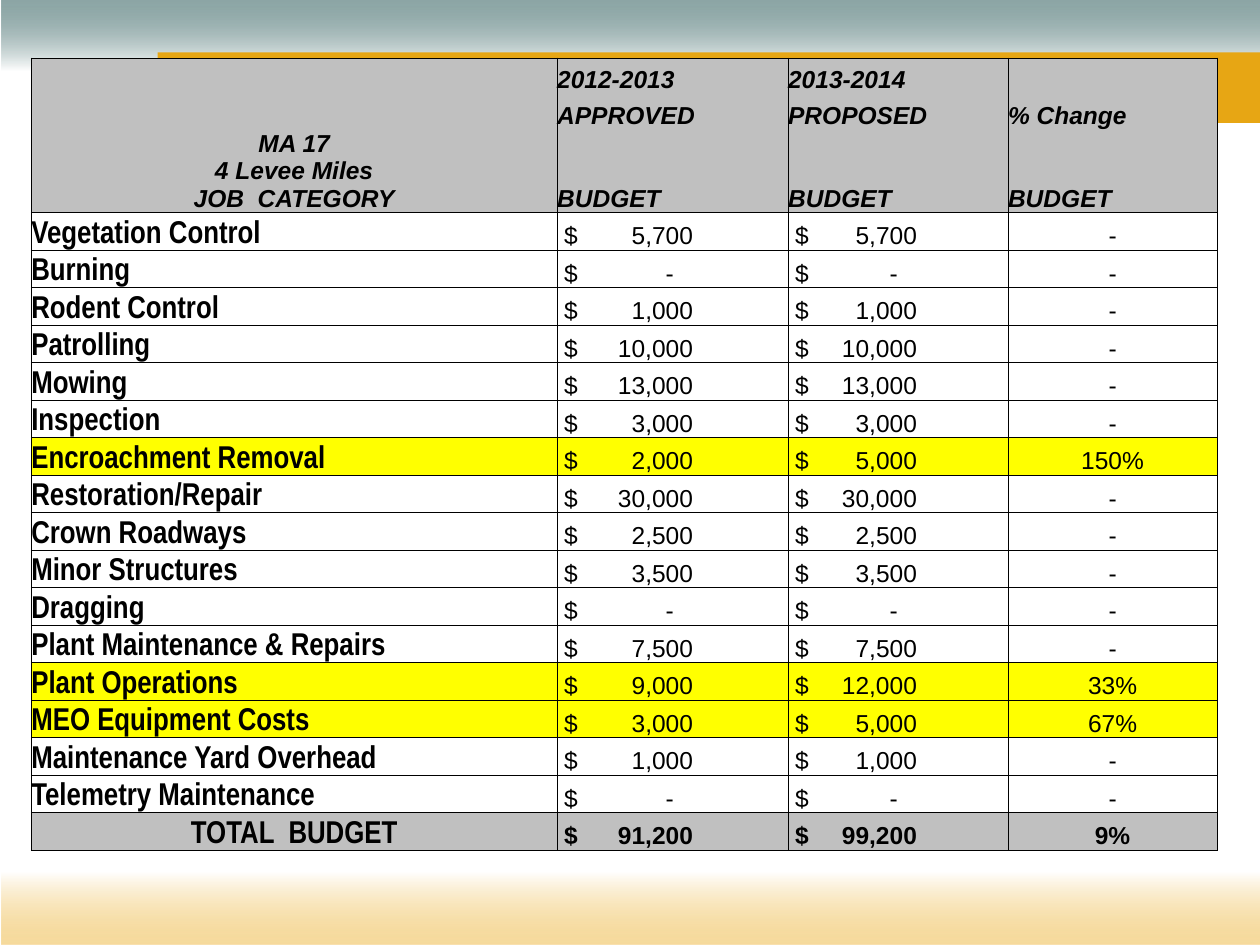
from dataclasses import dataclass

from lxml.etree import SubElement
from pptx import Presentation
from pptx.dml.color import RGBColor
from pptx.enum.shapes import MSO_SHAPE
from pptx.enum.text import MSO_ANCHOR, PP_ALIGN
from pptx.oxml.ns import qn
from pptx.util import Pt

BLACK, WHITE, GREY, YELLOW, ORANGE = "000000", "FFFFFF", "C0C0C0", "FFFF00", "E7A614"
COLUMN_WIDTHS = (300.5, 132, 125.7, 119.5)
HEADER_HEIGHTS = (20.5, 20.5, 47)
ROW_HEIGHT = 21.43
MONEY_INSET = 4
AMOUNT_ENDS = (73.7, 69.7)
DASH_SHIFT = 11


@dataclass(frozen=True)
class Band:
    left: float
    top: float
    width: float
    height: float
    colour: str
    angle: int | None = None  # counter-clockwise; None means a solid fill


@dataclass(frozen=True)
class Job:
    name: str
    approved: int
    proposed: int

    @property
    def change(self) -> str:
        if self.approved == self.proposed:
            return "-"
        return f"{self.proposed / self.approved - 1:.0%}"


BANDS = (
    Band(0.7, 0, 719.3, 78.5, "215352", 270),
    Band(90, 30, 630, 40.3, ORANGE),
    Band(0.7, 460, 719.3, 80, "EEB840", 90),
)

HEADINGS = (
    ("2012-2013", "APPROVED", "BUDGET"),
    ("2013-2014", "PROPOSED", "BUDGET"),
    ("", "% Change", "BUDGET"),
)

JOBS = (
    Job("Vegetation Control", 5700, 5700),
    Job("Burning", 0, 0),
    Job("Rodent Control", 1000, 1000),
    Job("Patrolling", 10000, 10000),
    Job("Mowing", 13000, 13000),
    Job("Inspection", 3000, 3000),
    Job("Encroachment Removal", 2000, 5000),
    Job("Restoration/Repair", 30000, 30000),
    Job("Crown Roadways", 2500, 2500),
    Job("Minor Structures", 3500, 3500),
    Job("Dragging", 0, 0),
    Job("Plant Maintenance & Repairs", 7500, 7500),
    Job("Plant Operations", 9000, 12000),
    Job("MEO Equipment Costs", 3000, 5000),
    Job("Maintenance Yard Overhead", 1000, 1000),
    Job("Telemetry Maintenance", 0, 0),
)
TOTAL = Job("TOTAL  BUDGET", sum(j.approved for j in JOBS), sum(j.proposed for j in JOBS))


def rgb(colour: str) -> RGBColor:
    return RGBColor.from_string(colour)


def draw_band(slide, band: Band) -> None:
    shape = slide.shapes.add_shape(
        MSO_SHAPE.RECTANGLE, Pt(band.left), Pt(band.top), Pt(band.width), Pt(band.height))
    shape.shadow.inherit = False
    shape.line.fill.background()
    if band.angle is None:
        shape.fill.solid()
        shape.fill.fore_color.rgb = rgb(band.colour)
        return
    shape.fill.gradient()
    shape.fill.gradient_angle = band.angle
    for stop, colour, position in zip(shape.fill.gradient_stops, (band.colour, WHITE), (0, 0.52)):
        stop.color.rgb = rgb(colour)
        stop.position = position
    tint = next(shape._element.spPr.iter(qn("a:srgbClr")))
    SubElement(tint, qn("a:alpha"), val="51000")


def write(cell, text: str, *, size: float = 14, font: str = "Arial", bold: bool = False,
          italic: bool = False, align=PP_ALIGN.LEFT, inset: float = 0,
          tab: float | None = None) -> None:
    cell.margin_left = Pt(inset)
    cell.margin_top = cell.margin_right = cell.margin_bottom = 0
    cell.vertical_anchor = MSO_ANCHOR.BOTTOM
    frame = cell.text_frame
    for number, line in enumerate(text.split("\n")):
        paragraph = frame.add_paragraph() if number else frame.paragraphs[0]
        paragraph.alignment = align
        if tab is not None:
            stops = SubElement(paragraph._p.get_or_add_pPr(), qn("a:tabLst"))
            SubElement(stops, qn("a:tab"), pos=str(Pt(tab)), algn="r")
        run = paragraph.add_run()
        run.text = line
        run.font.size, run.font.name = Pt(size), font
        run.font.bold, run.font.italic = bold, italic
        run.font.color.rgb = rgb(BLACK)


def finish(cell, colour: str | None, sides: str = "LRTB") -> None:
    """Give the cell thin borders on the named sides, then its fill."""
    properties = cell._tc.get_or_add_tcPr()
    for side in sides:
        border = SubElement(properties, qn(f"a:ln{side}"), w=str(Pt(0.5)))
        SubElement(SubElement(border, qn("a:solidFill")), qn("a:srgbClr"), val=BLACK)
    if colour is None:
        cell.fill.background()
    else:
        cell.fill.solid()
        cell.fill.fore_color.rgb = rgb(colour)


def draw_header(table) -> None:
    last = len(HEADER_HEIGHTS) - 1
    category = table.cell(0, 0)
    category.merge(table.cell(last, 0))
    write(category, "MA 17\n4 Levee Miles\nJOB  CATEGORY", bold=True, italic=True,
          align=PP_ALIGN.CENTER)
    for row in range(last + 1):
        finish(table.cell(row, 0), GREY)
    for column, lines in enumerate(HEADINGS, start=1):
        for row, line in enumerate(lines):
            cell = table.cell(row, column)
            write(cell, line, bold=True, italic=True)
            finish(cell, GREY, {0: "LRT", last: "LRB"}.get(row, "LR"))


def draw_job(table, row: int, job: Job, colour: str | None, is_total: bool = False) -> None:
    name, *amounts, change = (table.cell(row, column) for column in range(4))
    write(name, job.name, size=18, font="Arial Narrow", bold=True,
          align=PP_ALIGN.CENTER if is_total else PP_ALIGN.LEFT)
    for cell, amount, end in zip(amounts, (job.approved, job.proposed), AMOUNT_ENDS):
        write(cell, f"$\t{amount:,}" if amount else "$\t-", bold=is_total,
              inset=MONEY_INSET, tab=end if amount else end - DASH_SHIFT)
    write(change, job.change, bold=is_total, align=PP_ALIGN.CENTER)
    for cell in (name, *amounts, change):
        finish(cell, colour)


def main() -> None:
    deck = Presentation()
    deck.slide_width, deck.slide_height = Pt(720), Pt(540)
    slide = deck.slides.add_slide(deck.slide_layouts[6])

    # Background bands
    for band in BANDS:
        draw_band(slide, band)

    # Budget table, without a built-in style
    heights = HEADER_HEIGHTS + (ROW_HEIGHT,) * (len(JOBS) + 1)
    table = slide.shapes.add_table(
        len(heights), len(COLUMN_WIDTHS), Pt(17.9), Pt(33.2),
        Pt(sum(COLUMN_WIDTHS)), Pt(sum(heights))).table
    table.first_row = table.horz_banding = False
    table._tbl.tblPr.find(qn("a:tableStyleId")).text = "{2D5ABB26-0587-4C30-8999-92F81FD0307C}"
    for column, width in zip(table.columns, COLUMN_WIDTHS):
        column.width = Pt(width)
    for row, height in zip(table.rows, heights):
        row.height = Pt(height)

    # Header, jobs and total; changed budgets are highlighted
    draw_header(table)
    for row, job in enumerate(JOBS, start=len(HEADER_HEIGHTS)):
        draw_job(table, row, job, None if job.change == "-" else YELLOW)
    draw_job(table, len(heights) - 1, TOTAL, GREY, is_total=True)

    deck.save("out.pptx")


if __name__ == "__main__":
    main()
